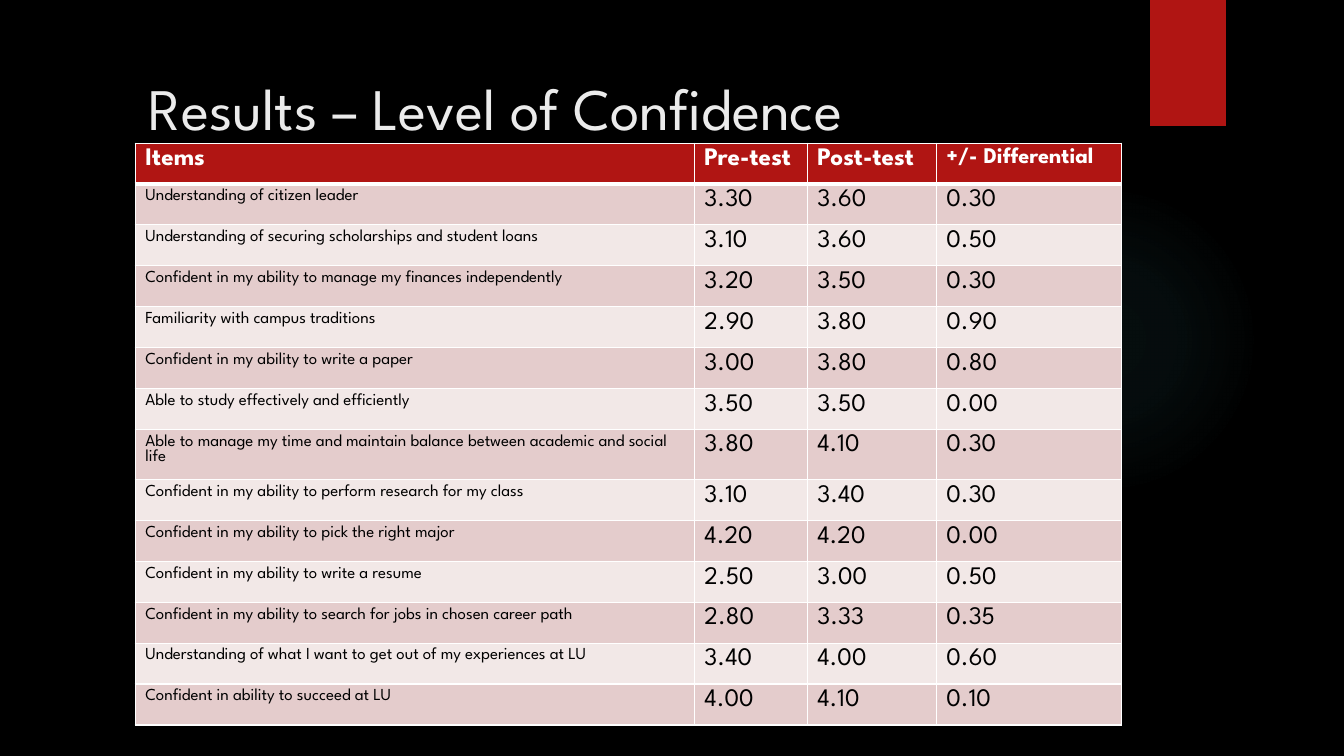
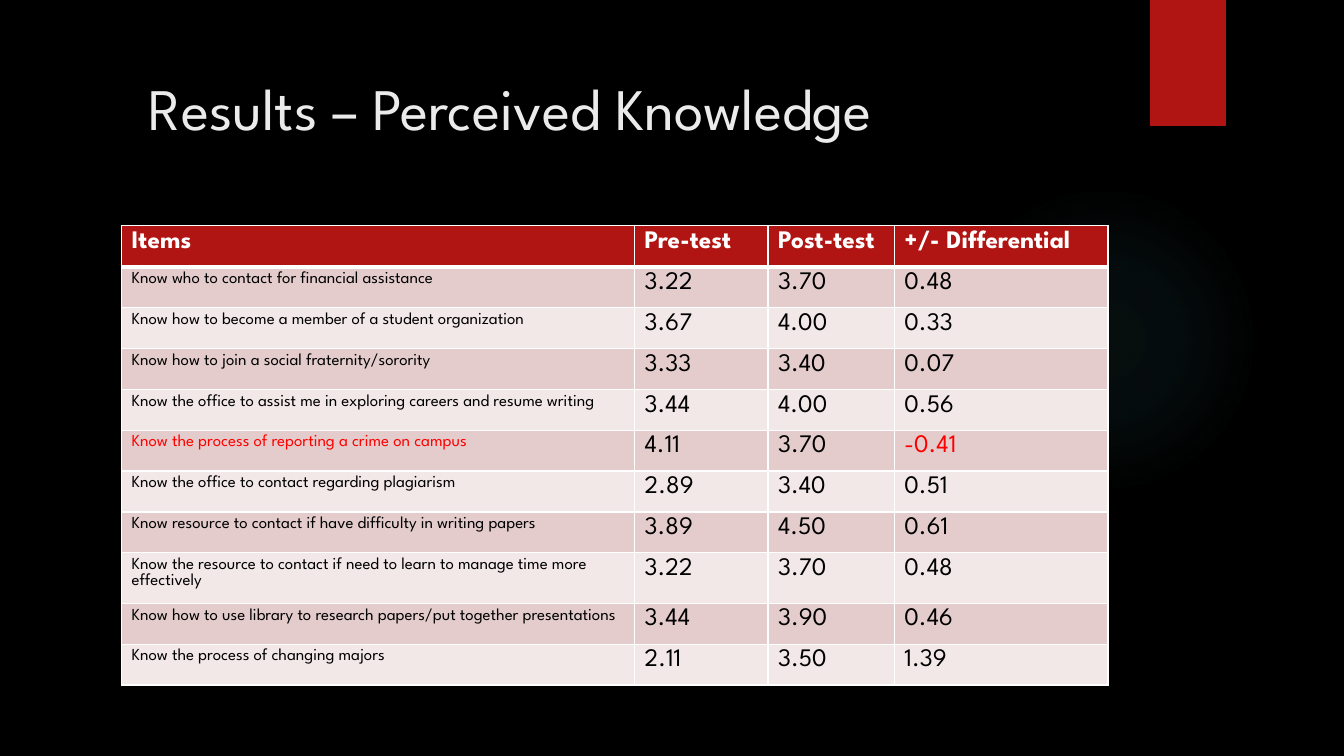
from dataclasses import dataclass

from lxml import etree
from pptx import Presentation
from pptx import util as u
from pptx.dml import color
from pptx.enum import shapes, text
from pptx.oxml import ns

WIDE, HIGH = u.Inches(40 / 3), u.Inches(7.5)
ROW = u.Pt(29.2)
FONT = "League Spartan"
RED, WHITE, BLACK, ALERT = "B01513", "FFFFFF", "000000", "FF0000"
PALE, GLOW, BANDS = "EBEBEB", "50B9C1", ("E4CCCC", "F2E8E7")
HEADS = ("Items", "Pre-test", "Post-test", "+/- Differential")


@dataclass(frozen=True)
class Area:
    """Shares of the slide's width and height, in percent."""
    left: float
    top: float
    wide: float
    high: float

    def box(self) -> tuple:
        return (across(self.left), down(self.top),
                across(self.wide), down(self.high))


@dataclass(frozen=True)
class Item:
    name: str
    pre: float
    post: float
    diff: float


@dataclass(frozen=True)
class Page:
    title: str
    left: float
    top: float
    cols: tuple
    last: int
    items: tuple


PAGES = (
    Page("Results – Level of Confidence", 10.07, 18.93,
         (41.6, 8.4, 9.6, 13.8), 16, (
             Item("Understanding of citizen leader", 3.3, 3.6, 0.3),
             Item("Understanding of securing scholarships and student loans", 3.1, 3.6, 0.5),
             Item("Confident in my ability to manage my finances independently", 3.2, 3.5, 0.3),
             Item("Familiarity with campus traditions", 2.9, 3.8, 0.9),
             Item("Confident in my ability to write a paper", 3.0, 3.8, 0.8),
             Item("Able to study effectively and efficiently", 3.5, 3.5, 0.0),
             Item("Able to manage my time and maintain balance between academic and social life",
                  3.8, 4.1, 0.3),
             Item("Confident in my ability to perform research for my class", 3.1, 3.4, 0.3),
             Item("Confident in my ability to pick the right major", 4.2, 4.2, 0.0),
             Item("Confident in my ability to write a resume", 2.5, 3.0, 0.5),
             Item("Confident in my ability to search for jobs in chosen career path",
                  2.8, 3.33, 0.35),
             Item("Understanding of what I want to get out of my experiences at LU",
                  3.4, 4.0, 0.6),
             Item("Confident in ability to succeed at LU", 4.0, 4.1, 0.1),
         )),
    Page("Results – Perceived Knowledge", 9.05, 29.87,
         (38.17, 9.93, 9.4, 15.9), 18, (
             Item("Know who to contact for financial assistance", 3.22, 3.7, 0.48),
             Item("Know how to become a member of a student organization", 3.67, 4.0, 0.33),
             Item("Know how to join a social fraternity/sorority", 3.33, 3.4, 0.07),
             Item("Know the office to assist me in exploring careers and resume writing",
                  3.44, 4.0, 0.56),
             Item("Know the process of reporting a crime on campus", 4.11, 3.7, -0.41),
             Item("Know the office to contact regarding plagiarism", 2.89, 3.4, 0.51),
             Item("Know resource to contact if have difficulty in writing papers",
                  3.89, 4.5, 0.61),
             Item("Know the resource to contact if need to learn to manage time more effectively",
                  3.22, 3.7, 0.48),
             Item("Know how to use library to research papers/put together presentations",
                  3.44, 3.9, 0.46),
             Item("Know the process of changing majors", 2.11, 3.5, 1.39),
         )),
)


def across(share: float) -> int:
    return round(WIDE * share / 100)


def down(share: float) -> int:
    return round(HIGH * share / 100)


def paint(fill, tone: str) -> None:
    fill.solid()
    fill.fore_color.rgb = color.RGBColor.from_string(tone)


def node(base, tag: str, **attrs):
    return etree.SubElement(base, ns.qn(tag), attrs)


def write(frame, words: str, size: float, tone: str, bold: bool = False) -> None:
    run = frame.paragraphs[0].add_run()
    run.text = words
    looks = {"name": FONT, "size": u.Pt(size), "bold": bold}
    for key, value in looks.items():
        setattr(run.font, key, value)
    run.font.color.rgb = color.RGBColor.from_string(tone)


def plain(slide, kind, area: Area):
    shape = slide.shapes.add_shape(kind, *area.box())
    shape.shadow.inherit = False
    shape.line.fill.background()
    return shape


def add_glow(slide) -> None:
    shape = plain(slide, shapes.MSO_SHAPE.OVAL, Area(70.58, 24.4, 23.1, 41.07))
    shape.fill.background()
    props = shape.fill._xPr
    grad = etree.Element(ns.qn("a:gradFill"), rotWithShape="1")
    stops = node(grad, "a:gsLst")
    for place, alpha in ((0, 7), (36, 6), (69, 0)):
        stop = node(stops, "a:gs", pos=str(place * 1000))
        tone = node(stop, "a:srgbClr", val=GLOW)
        node(tone, "a:alpha", val=str(alpha * 1000))
    ring = node(grad, "a:path", path="circle")
    node(ring, "a:fillToRect", l="50000", t="50000", r="50000", b="50000")
    props.replace(props.find(ns.qn("a:noFill")), grad)


def add_frame(slide, title: str) -> None:
    add_glow(slide)
    flag = plain(slide, shapes.MSO_SHAPE.RECTANGLE, Area(85.58, 0, 5.63, 16.67))
    paint(flag.fill, RED)
    frame = slide.shapes.add_textbox(*Area(10.35, 8.8, 72, 10.67).box()).text_frame
    looks = {"word_wrap": True, "vertical_anchor": text.MSO_ANCHOR.TOP}
    for key, value in looks.items():
        setattr(frame, key, value)
    write(frame, title, 42, PALE)


def edge(cell, row: int) -> None:
    props = cell._tc.get_or_add_tcPr()
    thick = {("T", 1): 3, ("B", 0): 3}
    for spot, side in enumerate("LRTB"):
        width = u.Pt(thick.get((side, row), 1))
        line = etree.Element(ns.qn(f"a:ln{side}"), w=str(int(width)))
        tone = node(node(line, "a:solidFill"), "a:srgbClr")
        tone.set("val", WHITE)
        props.insert(spot, line)


def add_grid(slide, page: Page) -> None:
    count = len(page.items) + 1
    grid = slide.shapes.add_table(
        count, len(HEADS), across(page.left), across(0) + down(page.top),
        across(sum(page.cols)), ROW * count).table
    for col, share in zip(grid.columns, page.cols):
        col.width = across(share)
    for row in grid.rows:
        row.height = ROW
    sizes = (18, 18, 18, page.last)
    for cell, head, size in zip(grid.rows[0].cells, HEADS, sizes):
        paint(cell.fill, RED)
        edge(cell, 0)
        write(cell.text_frame, head, size, WHITE, True)
    for index, item in enumerate(page.items, 1):
        tone = ALERT if item.diff < 0 else BLACK
        entries = ((item.name, 12, tone), (f"{item.pre:.2f}", 18, BLACK),
                   (f"{item.post:.2f}", 18, BLACK), (f"{item.diff:.2f}", 18, tone))
        for cell, entry in zip(grid.rows[index].cells, entries):
            paint(cell.fill, BANDS[(index - 1) % 2])
            edge(cell, index)
            write(cell.text_frame, *entry)


def main() -> None:
    deck = Presentation()
    for key, value in {"slide_width": WIDE, "slide_height": HIGH}.items():
        setattr(deck, key, value)
    paint(deck.slide_master.background.fill, BLACK)
    for page in PAGES:
        slide = deck.slides.add_slide(deck.slide_layouts[6])
        add_frame(slide, page.title)
        add_grid(slide, page)
    deck.save("out.pptx")


if __name__ == "__main__":
    main()
